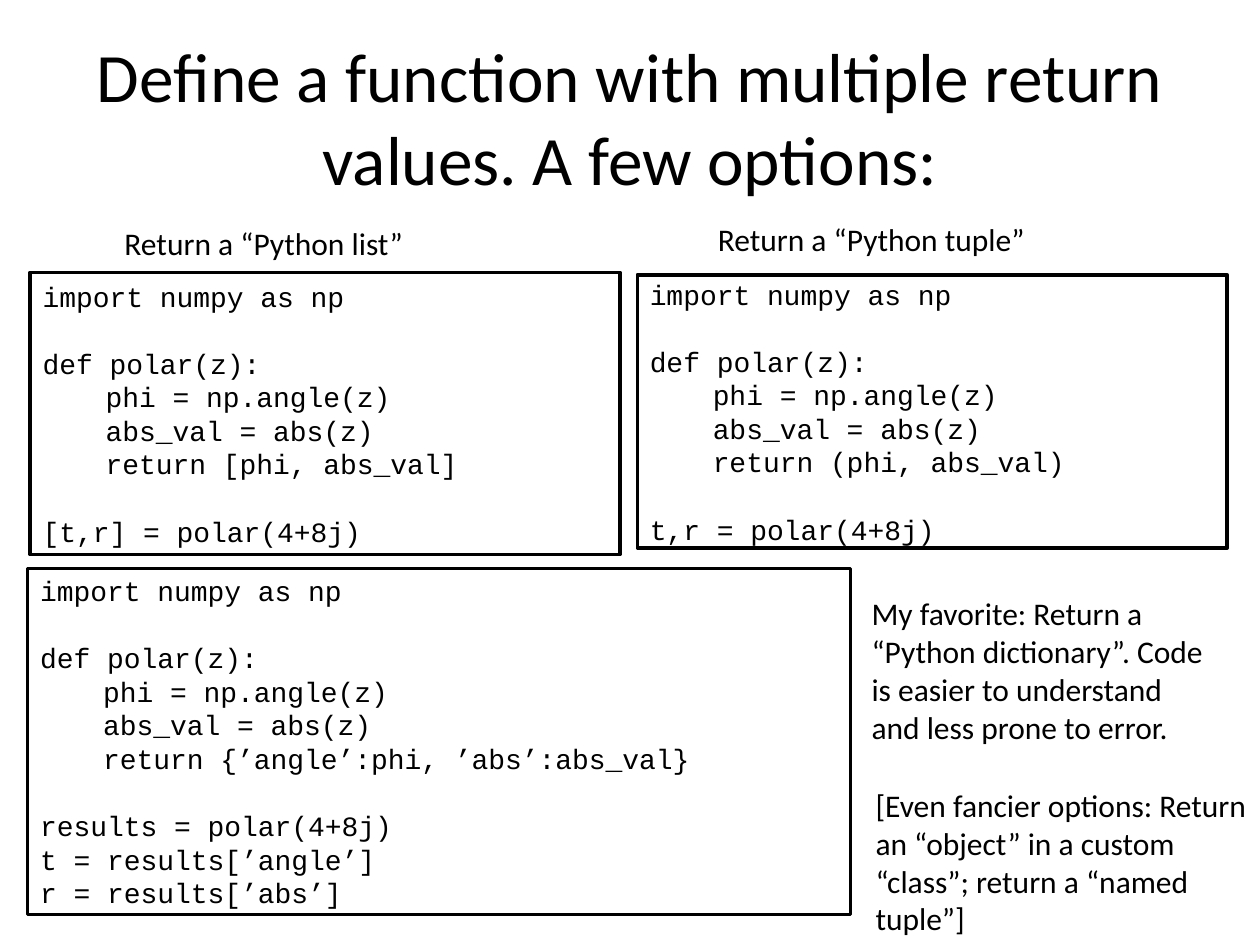
"""Build a slide comparing ways to return several values from a function."""
from dataclasses import dataclass

from pptx import Presentation
from pptx.dml.color import RGBColor
from pptx.enum.shapes import MSO_SHAPE
from pptx.enum.text import MSO_ANCHOR, MSO_AUTO_SIZE, PP_ALIGN
from pptx.util import Cm, Pt


@dataclass(frozen=True)
class Theme:
    ink: RGBColor = RGBColor(0, 0, 0)
    prose_font: str = "Calibri"
    code_font: str = "Courier New"
    title_size: float = 39.6
    prose_size: float = 18
    code_size: float = 16
    code_gap: float = 19.2
    outline: float = 2


THEME = Theme()
SLIDE_SIZE = (25.4, 19.05)
TITLE = "Define a function with multiple return values. A few options:"
TITLE_BOX = (1.27, 0.76, 22.86, 3.18)

LISTINGS = [
    ((0.61, 5.49, 11.89, 5.69), "[phi, abs_val]", ["[t,r] = polar(4+8j)"]),
    ((12.85, 5.54, 11.89, 5.51), "(phi, abs_val)", ["t,r = polar(4+8j)"]),
    ((0.56, 11.46, 16.59, 6.98), "{’angle’:phi, ’abs’:abs_val}",
     ["results = polar(4+8j)", "t = results[’angle’]", "r = results[’abs’]"]),
]

CAPTIONS = [
    ((2.26, 4.39, 7.62, 1.02), "Return a “Python list”"),
    ((14.22, 4.32, 7.62, 1.02), "Return a “Python tuple”"),
    ((17.32, 11.86, 7.47, 3.33),
     "My favorite: Return a “Python dictionary”. Code is easier to "
     "understand and less prone to error."),
    ((17.4, 15.72, 8, 3.33),
     "[Even fancier options: Return an “object” in a custom “class”; "
     "return a “named tuple”]"),
]


def code_sections(returned, usage):
    definition = ["def polar(z):", "\tphi = np.angle(z)",
                  "\tabs_val = abs(z)", f"\treturn {returned}"]
    return [["import numpy as np"], definition, usage]


def style(paragraph, name, size, align=PP_ALIGN.LEFT):
    paragraph.alignment = align
    paragraph.font.name = name
    paragraph.font.size = Pt(size)
    paragraph.font.color.rgb = THEME.ink


def add_title(slide):
    title = slide.shapes.title
    title.left, title.top, title.width, title.height = map(Cm, TITLE_BOX)
    title.text_frame.text = TITLE
    title.text_frame.vertical_anchor = MSO_ANCHOR.MIDDLE
    style(title.text_frame.paragraphs[0], THEME.prose_font,
          THEME.title_size, PP_ALIGN.CENTER)


def add_listing(slide, box, sections):
    listing = slide.shapes.add_shape(MSO_SHAPE.RECTANGLE, *map(Cm, box))
    listing.shadow.inherit = False
    listing.fill.background()
    listing.line.color.rgb = THEME.ink
    listing.line.width = Pt(THEME.outline)
    frame = listing.text_frame
    frame.word_wrap = True
    frame.vertical_anchor = MSO_ANCHOR.MIDDLE
    frame.text = "\n".join(line for section in sections for line in section)
    starts = {section[0] for section in sections[1:]}
    for paragraph in frame.paragraphs:
        style(paragraph, THEME.code_font, THEME.code_size)
        if paragraph.text in starts:
            paragraph.space_before = Pt(THEME.code_gap)


def add_caption(slide, box, text):
    frame = slide.shapes.add_textbox(*map(Cm, box)).text_frame
    frame.word_wrap = True
    frame.auto_size = MSO_AUTO_SIZE.SHAPE_TO_FIT_TEXT
    frame.text = text
    style(frame.paragraphs[0], THEME.prose_font, THEME.prose_size)


def main():
    deck = Presentation()
    deck.slide_width, deck.slide_height = map(Cm, SLIDE_SIZE)
    slide = deck.slides.add_slide(deck.slide_layouts.get_by_name("Title Only"))
    add_title(slide)
    for box, returned, usage in LISTINGS:
        add_listing(slide, box, code_sections(returned, usage))
    for box, text in CAPTIONS:
        add_caption(slide, box, text)
    deck.save("out.pptx")


if __name__ == "__main__":
    main()
